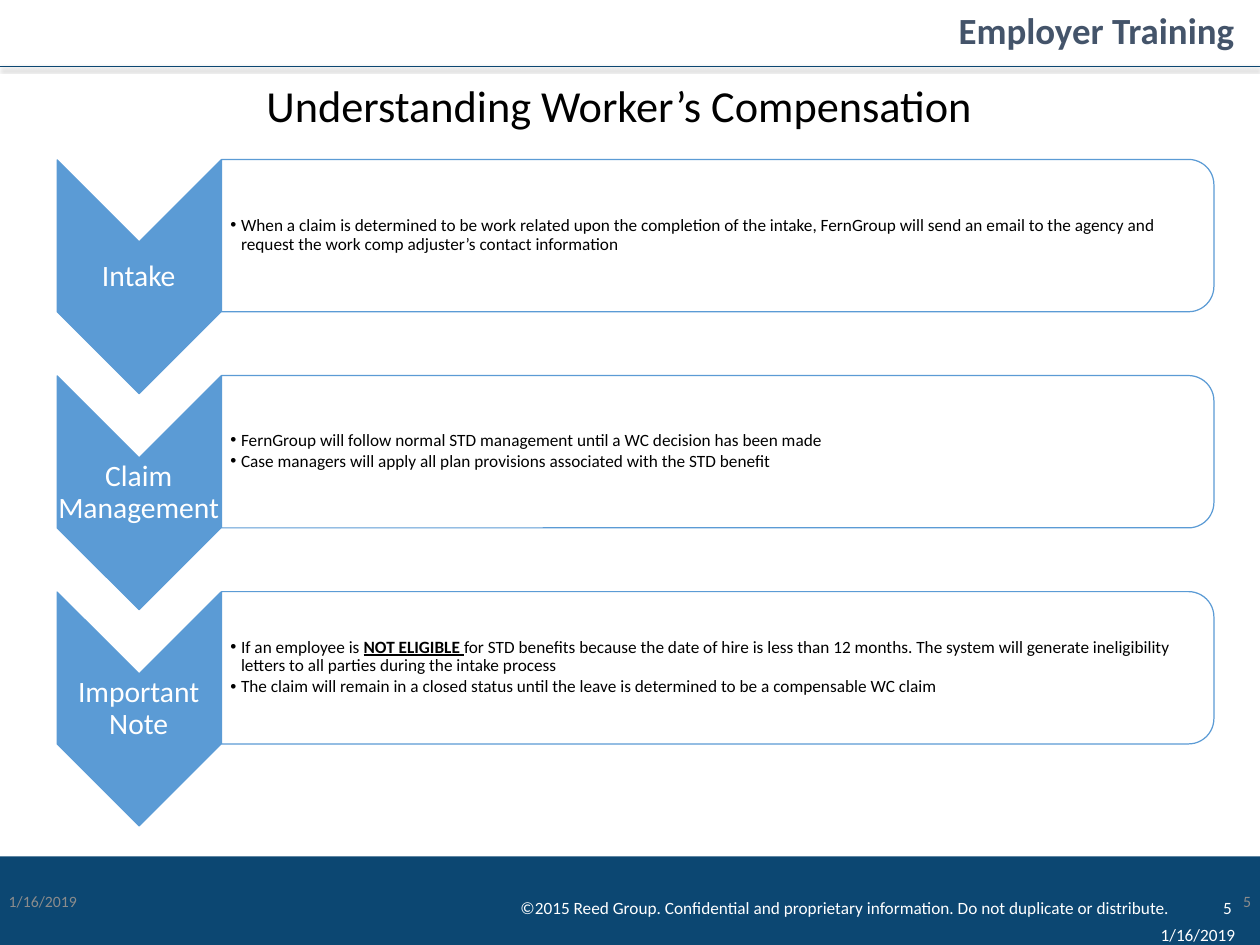
from lxml.etree import SubElement
from pptx import Presentation
from pptx.dml.color import RGBColor
from pptx.enum.shapes import MSO_CONNECTOR, MSO_SHAPE
from pptx.enum.text import MSO_ANCHOR, MSO_AUTO_SIZE, PP_ALIGN
from pptx.oxml import parse_xml
from pptx.oxml.ns import nsdecls, qn
from pptx.util import Inches, Pt

NAVY = RGBColor(0x0C, 0x47, 0x72)
BLUE = RGBColor(0x5B, 0x9B, 0xD5)
SLATE = RGBColor(0x44, 0x54, 0x6A)
GRAY = RGBColor(0x8C, 0x8C, 0x8C)
WHITE = RGBColor(0xFF, 0xFF, 0xFF)
BLACK = RGBColor(0, 0, 0)

LEFT, CENTER, RIGHT = PP_ALIGN.LEFT, PP_ALIGN.CENTER, PP_ALIGN.RIGHT
TOP, MIDDLE = MSO_ANCHOR.TOP, MSO_ANCHOR.MIDDLE
STEP = 2.44  # distance between rows

ROWS = [
    ("Intake", [
        [("When a claim is determined to be work related upon the completion of the intake, "
          "FernGroup will send an email to the agency and request the work comp adjuster’s "
          "contact information", False)],
    ]),
    ("Claim Management", [
        [("FernGroup will follow normal STD management until a WC decision has been made", False)],
        [("Case managers will apply all plan provisions associated with the STD benefit", False)],
    ]),
    ("Important Note", [
        [("If an employee is ", False), ("NOT ELIGIBLE ", True),
         ("for STD benefits because the date of hire is less than 12 months. The system will "
          "generate ineligibility letters to all parties during the intake process", False)],
        [("The claim will remain in a closed status until the leave is determined to be a "
          "compensable WC claim", False)],
    ]),
]


def set_frame(sp, box, anchor, margins=(0.1, 0.05, 0.1, 0.05), wrap=True):
    """Place a text shape and set up its frame."""
    for name, value in zip(("left", "top", "width", "height"), box):
        setattr(sp, name, Inches(value))
    tf = sp.text_frame
    values = {"auto_size": MSO_AUTO_SIZE.NONE, "word_wrap": wrap, "vertical_anchor": anchor}
    for side, value in zip(("left", "top", "right", "bottom"), margins):
        values["margin_" + side] = Inches(value)
    for name, value in values.items():
        setattr(tf, name, value)
    return tf


def add_run(p, text, size, color, align=LEFT, bold=False, underline=False):
    """Add one formatted run to a paragraph."""
    p.alignment = align
    r = p.add_run()
    r.text = text
    values = {"name": "Calibri", "size": Pt(size), "bold": bold, "underline": underline}
    for name, value in values.items():
        setattr(r.font, name, value)
    r.font.color.rgb = color


prs = Presentation()
prs.slide_width, prs.slide_height = Inches(14.22), Inches(10.67)
s = prs.slides.add_slide(prs.slide_layouts[4])
title, *lists, spare = s.placeholders
spare.element.getparent().remove(spare.element)

# Footer band
band = s.shapes.add_shape(MSO_SHAPE.RECTANGLE, Inches(-0.06), Inches(9.67),
                          Inches(14.3), Inches(1.25))
band.shadow.inherit = False
band.fill.solid()
band.fill.fore_color.rgb = NAVY
band.line.fill.background()

# Header rule with a soft shadow
rule = s.shapes.add_connector(MSO_CONNECTOR.STRAIGHT, 0, Inches(0.75),
                              prs.slide_width, Inches(0.75))
rule.line.color.rgb = NAVY
rule.line.width = Pt(1.5)
rule.element.spPr.append(parse_xml(
    f'<a:effectLst {nsdecls("a")}><a:outerShdw blurRad="38100" dist="25400" dir="5400000">'
    '<a:srgbClr val="808080"><a:alpha val="50000"/></a:srgbClr></a:outerShdw></a:effectLst>'))

# Header and footer text
for text, box, size, color, align, anchor, wrap, bold in [
    ("©2015 Reed Group. Confidential and proprietary information. "
     "Do not duplicate or distribute.",
     (5.69, 10.08, 7.61, 0.34), 14, WHITE, RIGHT, TOP, False, False),
    ("5", (13.31, 10.08, 0.69, 0.34), 14, WHITE, RIGHT, TOP, True, False),
    ("1/16/2019", (13, 10.39, 1.05, 0.34), 14, WHITE, LEFT, TOP, False, False),
    ("Employer Training", (1.86, 0.04, 12.17, 0.61), 30, SLATE, RIGHT, TOP, True, True),
    ("1/16/2019", (0, 9.89, 3.2, 0.57), 12.8, GRAY, LEFT, MIDDLE, True, False),
    ("5", (11.02, 9.89, 3.2, 0.57), 12.8, GRAY, RIGHT, MIDDLE, True, False),
]:
    tf = set_frame(s.shapes.add_textbox(0, 0, 0, 0), box, anchor, wrap=wrap)
    add_run(tf.paragraphs[0], text, size, color, align, bold)

# Title
p = set_frame(title, (0.62, 0.9, 12.85, 0.67), TOP).paragraphs[0]
p.line_spacing, p.space_before = 0.9, Pt(0)
add_run(p, "Understanding Worker’s Compensation ", 36, BLACK, CENTER)

# Rows: chevron, label, panel and list
for i, ((label, items), body) in enumerate(zip(ROWS, lists)):
    y = i * STEP
    for kind, box, fill in [
        (MSO_SHAPE.CHEVRON, (0.25, 2.2 + y, 2.64, 1.85), BLUE),
        (MSO_SHAPE.ROUND_2_SAME_RECTANGLE, (7.24, -2.94 + y, 1.72, 11.2), WHITE),
    ]:
        sp = s.shapes.add_shape(kind, *map(Inches, box))
        sp.rotation = 90
        sp.shadow.inherit = False
        sp.fill.solid()
        sp.fill.fore_color.rgb = fill
        sp.line.color.rgb = BLUE
        sp.line.width = Pt(1)
    # The panel is slightly transparent
    panel_color = sp.element.spPr.find(qn("a:solidFill"))[0]
    SubElement(panel_color, qn("a:alpha")).set("val", "90000")

    # The longest word needs the full width of the chevron
    tf = set_frame(s.shapes.add_textbox(0, 0, 0, 0), (0.62, 2.73 + y, 1.89, 0.79),
                   MIDDLE, (0,) * 4)
    tf.paragraphs[0].line_spacing = 0.9
    add_run(tf.paragraphs[0], label, 24, WHITE, CENTER)

    # Bring the list in front of its panel
    sp.element.addnext(body.element)
    tf = set_frame(body, (2.49, 1.88 + y, 11.12, 1.55), MIDDLE, (0.11, 0.01, 0.01, 0.01))
    for n, item in enumerate(items):
        p = tf.add_paragraph() if n else tf.paragraphs[0]
        p.line_spacing, p.space_before, p.space_after = 0.9, Pt(0), Pt(2)
        pPr = p._p.get_or_add_pPr()
        pPr.set("marL", str(Inches(0.12)))
        pPr.set("indent", str(Inches(-0.12)))
        SubElement(pPr, qn("a:buChar")).set("char", "•")
        for text, strong in item:
            add_run(p, text, 14, BLACK, bold=strong, underline=strong)

prs.save("out.pptx")
